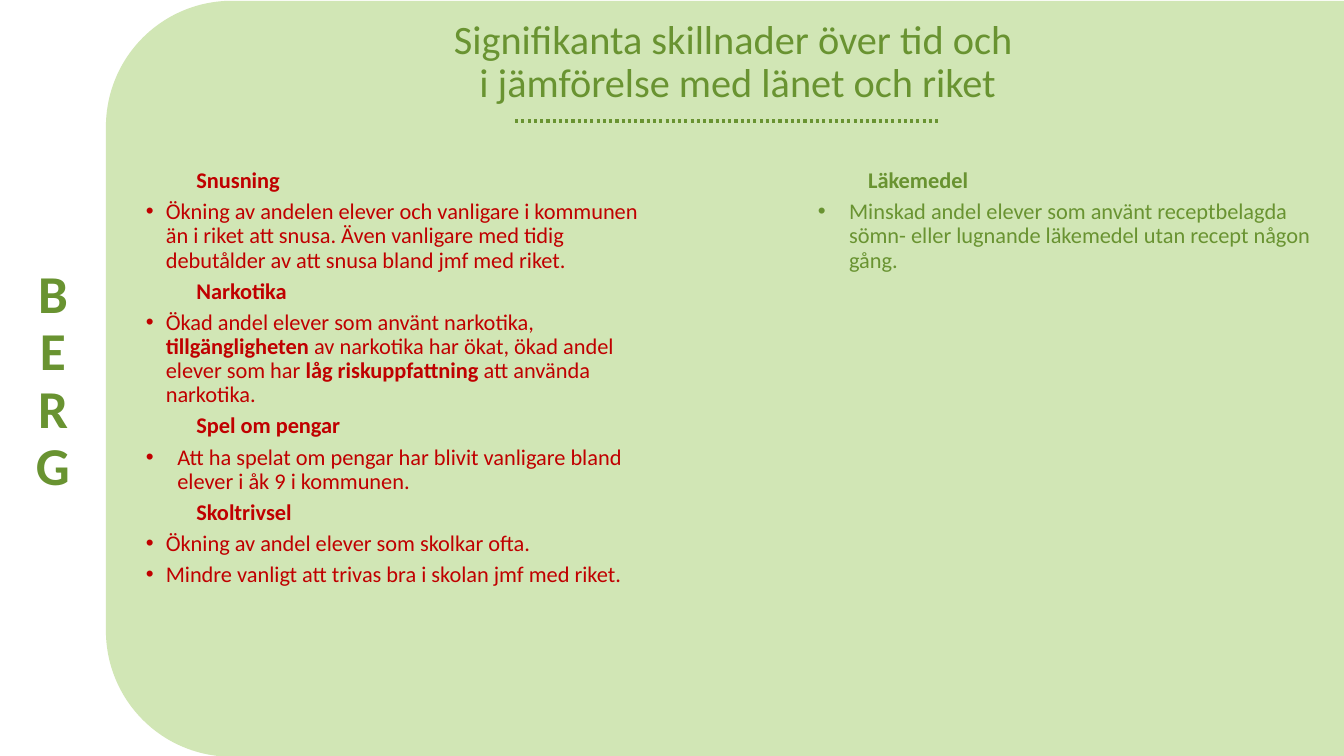
from pptx import Presentation
from pptx.dml.color import RGBColor
from pptx.enum import dml, shapes, text
from pptx.oxml import parse_xml
from pptx.oxml.ns import nsdecls
from pptx.util import Cm, Pt

# Content: (kind, text), with bold parts between asterisks
PLACE = "BERG"
TITLE = "Signifikanta skillnader över tid och \vi jämförelse med länet och riket"
WORSE = [
    ("head", "*Snusning*"),
    ("near", "Ökning av andelen elever och vanligare i kommunen än i riket att snusa. "
             "Även vanligare med tidig debutålder av att snusa bland jmf med riket."),
    ("head", "*Narkotika*"),
    ("near", "Ökad andel elever som använt narkotika, *tillgängligheten* av narkotika "
             "har ökat, ökad andel elever som har *låg riskuppfattning *att använda narkotika."),
    ("head", "*Spel om pengar*"),
    ("wide", "Att ha spelat om pengar har blivit vanligare bland elever i åk 9 i kommunen."),
    ("head", "*Skoltrivsel*"),
    ("near", "Ökning av andel elever som skolkar ofta."),
    ("near", "Mindre vanligt att trivas bra i skolan jmf med riket."),
]
BETTER = [
    ("head", "*Läkemedel*"),
    ("wide", "Minskad andel elever som använt receptbelagda sömn- eller lugnande "
             "läkemedel utan recept någon gång."),
]
# Kind: (level, hanging indent in cm)
KINDS = {"head": (1, 0), "near": (2, 0.5), "wide": (1, 0.79)}

FONT = "Calibri"
GREEN, PALE, RED = "699331", "D1E6B5", "C00000"

# Layout in cm
WIDE, HIGH = 33.87, 19.05
SIDE = 2.67
COLS = [(3.43, 14.88, WORSE, RED), (20.36, 3.76, BETTER, GREEN)]
COL_TOP, COL_WIDE = 4.14, 13.51
RULE_Y, RULE_X = 3.05, (12.98, 23.67)

prs = Presentation()
prs.slide_width, prs.slide_height = Cm(WIDE), Cm(HIGH)
slide = prs.slides.add_slide(prs.slide_layouts[6])


def color(code):
    return RGBColor.from_string(code)


def style(run, size, tone, bold=False):
    font = run.font
    font.name, font.size, font.bold = FONT, Pt(size), bold
    font.color.rgb = color(tone)


def add_box(left, top, width, height, anchor):
    box = slide.shapes.add_textbox(Cm(left), Cm(top), Cm(width), Cm(height))
    frame = box.text_frame
    frame.word_wrap = True
    frame.vertical_anchor = anchor
    return frame


def add_label(frame, words, size, bold=False):
    frame.text = words
    para = frame.paragraphs[0]
    para.alignment = text.PP_ALIGN.CENTER
    para.line_spacing = 0.9
    for run in para.runs:
        style(run, size, GREEN, bold)


def add_bullet(para, hang):
    props = para._p.get_or_add_pPr()
    props.set("marL", str(Cm(hang)))
    props.set("indent", str(-Cm(hang)))
    props.append(parse_xml(f'<a:buFont {nsdecls("a")} typeface="Arial"/>'))
    props.append(parse_xml(f'<a:buChar {nsdecls("a")} char="•"/>'))


def add_list(frame, items, tone):
    for i, (kind, words) in enumerate(items):
        para = frame.add_paragraph() if i else frame.paragraphs[0]
        para.level, hang = KINDS[kind]
        para.line_spacing, para.space_before = 0.9, Pt(5)
        if hang:
            add_bullet(para, hang)
        for j, part in enumerate(words.split("*")):
            if part:
                run = para.add_run()
                run.text = part
                style(run, 16, tone, j % 2 == 1)


# Rounded panel, running past the right edge
panel = slide.shapes.add_shape(shapes.MSO_SHAPE.ROUNDED_RECTANGLE,
                               Cm(SIDE), Cm(0.02), Cm(34.44), Cm(HIGH))
panel.shadow.inherit = False
panel.fill.solid()
panel.fill.fore_color.rgb = color(PALE)
panel.line.fill.background()

# Place name, stacked letters
side = add_box(0, 0.36, SIDE, 18.54, text.MSO_ANCHOR.BOTTOM)
side._txBody.bodyPr.set("vert", "wordArtVert")
add_label(side, PLACE, 38, True)

# Two columns of findings
for left, height, items, tone in COLS:
    add_list(add_box(left, COL_TOP, COL_WIDE, height, text.MSO_ANCHOR.TOP), items, tone)

# Dotted rule under the title
rule = slide.shapes.add_connector(shapes.MSO_CONNECTOR.STRAIGHT,
                                  Cm(RULE_X[0]), Cm(RULE_Y), Cm(RULE_X[1]), Cm(RULE_Y))
rule.line.color.rgb = color(GREEN)
rule.line.width = Pt(2.25)
rule.line.dash_style = dml.MSO_LINE.ROUND_DOT
rule._element.spPr.append(parse_xml(f'<a:effectLst {nsdecls("a")}/>'))

# Title
add_label(add_box(11, 0.46, 15.19, 2.26, text.MSO_ANCHOR.MIDDLE), TITLE, 28.8)

prs.save("out.pptx")
